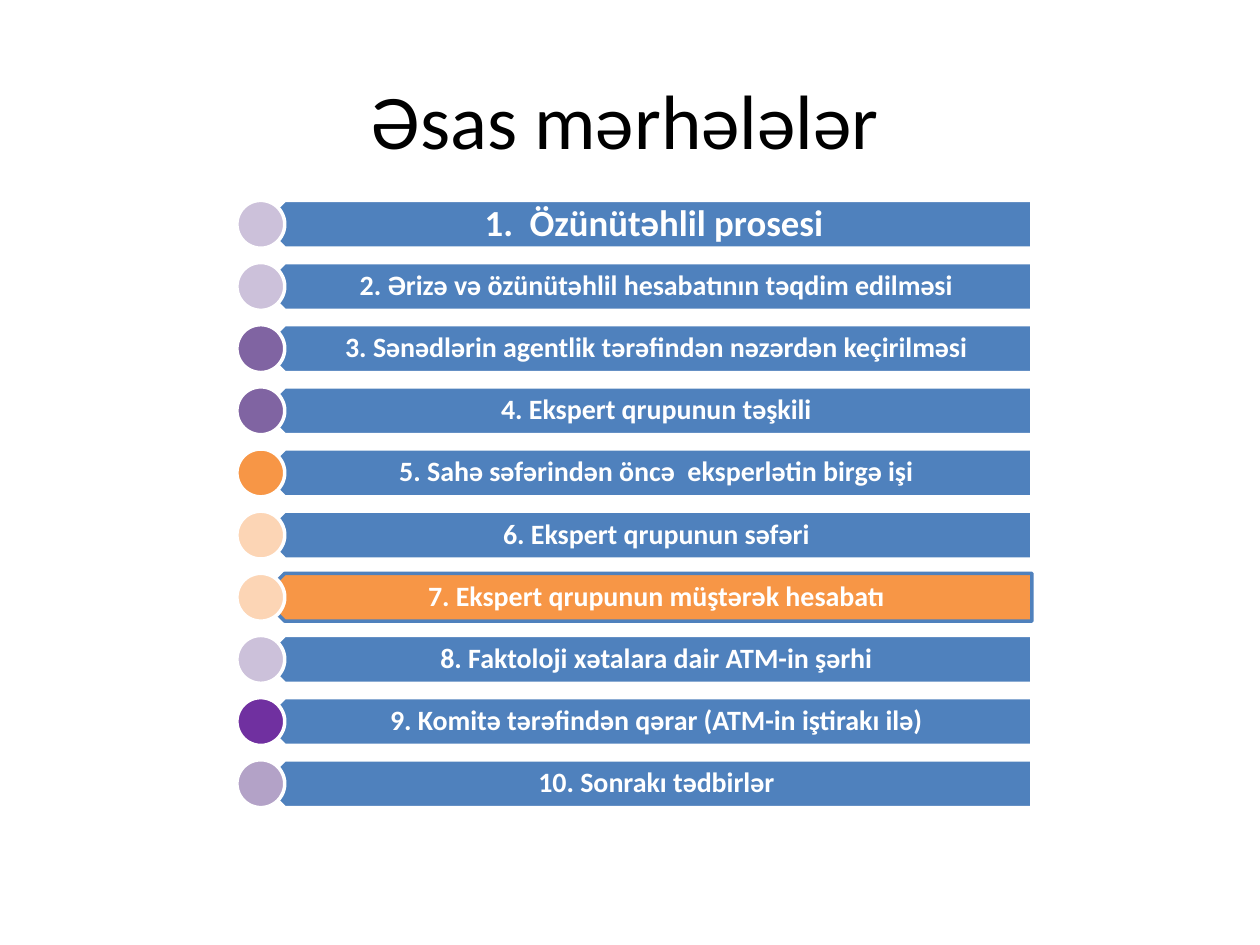
from pptx import Presentation
from pptx.dml.color import RGBColor
from pptx.enum import shapes, text
from pptx.util import Inches, Pt

WHITE = RGBColor(0xFF, 0xFF, 0xFF)
BLACK = RGBColor(0x00, 0x00, 0x00)
BLUE = RGBColor(0x4F, 0x81, 0xBD)
ORANGE = RGBColor(0xF7, 0x96, 0x46)
PEACH = RGBColor(0xFC, 0xD5, 0xB5)
LILAC = RGBColor(0xCC, 0xC1, 0xDA)
MAUVE = RGBColor(0xB3, 0xA2, 0xC7)
PURPLE = RGBColor(0x80, 0x64, 0xA2)
VIOLET = RGBColor(0x70, 0x30, 0xA0)

FIRST_TOP, LAST_TOP = 1.59, 6.03
ROW_HEIGHT = 0.38
HIGHLIGHTED_STAGE = 7

STAGES = [
    ("1.  Özünütəhlil prosesi", LILAC),
    ("2. Ərizə və özünütəhlil hesabatının təqdim edilməsi", LILAC),
    ("3. Sənədlərin agentlik tərəfindən nəzərdən keçirilməsi", PURPLE),
    ("4. Ekspert qrupunun təşkili", PURPLE),
    ("5. Sahə səfərindən öncə  eksperlətin birgə işi", ORANGE),
    ("6. Ekspert qrupunun səfəri", PEACH),
    ("7. Ekspert qrupunun müştərək hesabatı", PEACH),
    ("8. Faktoloji xətalara dair ATM-in şərhi", LILAC),
    ("9. Komitə tərəfindən qərar (ATM-in iştirakı ilə)", VIOLET),
    ("10. Sonrakı tədbirlər", MAUVE),
]


def set_all(target, values):
    for attribute, value in values.items():
        setattr(target, attribute, value)


def write_centred(frame, wording, size, color, bold=False):
    set_all(frame, {"word_wrap": True, "vertical_anchor": text.MSO_ANCHOR.MIDDLE})
    paragraph = frame.paragraphs[0]
    paragraph.text = wording
    paragraph.alignment = text.PP_ALIGN.CENTER
    set_all(paragraph.font, {"name": "Calibri", "size": Pt(size), "bold": bold})
    paragraph.font.color.rgb = color
    return paragraph


def add_title(slide, wording):
    title = slide.shapes.title
    set_all(title, {"left": Inches(0.65), "top": Inches(0.49),
                    "width": Inches(8.62), "height": Inches(0.9)})
    write_centred(title.text_frame, wording, 44, BLACK)


def add_outlined(slide, preset, left, top, width, fill, outline):
    shape = slide.shapes.add_shape(preset, Inches(left), Inches(top),
                                   Inches(width), Inches(ROW_HEIGHT))
    shape.shadow.inherit = False
    shape.fill.solid()
    shape.fill.fore_color.rgb = fill
    shape.line.color.rgb = outline
    shape.line.width = Pt(2)
    return shape


def add_label(slide, wording, top, size):
    label = slide.shapes.add_textbox(Inches(2.17), Inches(top),
                                     Inches(6.03), Inches(ROW_HEIGHT))
    set_all(label.text_frame, {
        "margin_left": Inches(0.17), "margin_right": Inches(size * 0.0075),
        "margin_top": Inches(0.07), "margin_bottom": Inches(0.07)})
    paragraph = write_centred(label.text_frame, wording, size, WHITE, bold=True)
    paragraph.line_spacing = 0.9


def add_stage(slide, number, wording, marker_color):
    step = (LAST_TOP - FIRST_TOP) / (len(STAGES) - 1)
    top = FIRST_TOP + (number - 1) * step
    highlighted = number == HIGHLIGHTED_STAGE
    banner = add_outlined(slide, shapes.MSO_SHAPE.PENTAGON, 2.07, top, 6.12,
                          ORANGE if highlighted else BLUE,
                          BLUE if highlighted else WHITE)
    banner.rotation = 180
    add_label(slide, wording, top, 21 if number == 1 else 16)
    add_outlined(slide, shapes.MSO_SHAPE.OVAL, 1.88, top, ROW_HEIGHT,
                 marker_color, WHITE)


def main():
    deck = Presentation()
    set_all(deck, {"slide_width": Inches(10), "slide_height": Inches(7.5)})
    slide = deck.slides.add_slide(deck.slide_layouts[5])
    add_title(slide, "Əsas mərhələlər")
    for number, (wording, marker_color) in enumerate(STAGES, start=1):
        add_stage(slide, number, wording, marker_color)
    deck.save("out.pptx")


if __name__ == "__main__":
    main()
